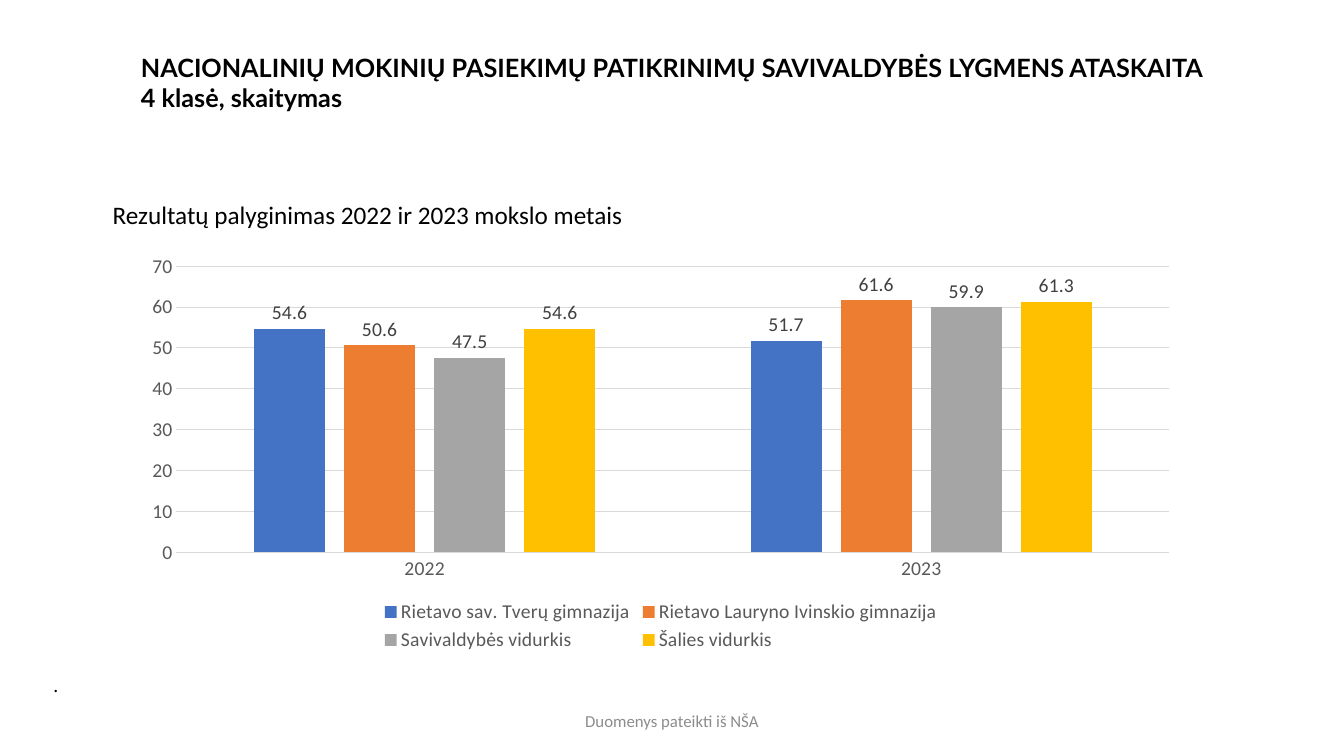
from dataclasses import dataclass

from pptx import Presentation
from pptx.chart.data import CategoryChartData
from pptx.dml.color import RGBColor
from pptx.enum.chart import XL_CHART_TYPE, XL_LABEL_POSITION, XL_LEGEND_POSITION, XL_TICK_MARK
from pptx.enum.text import MSO_ANCHOR, PP_ALIGN
from pptx.util import Inches, Pt

CLUSTERED = XL_CHART_TYPE.COLUMN_CLUSTERED
OUTSIDE_END = XL_LABEL_POSITION.OUTSIDE_END
LEGEND_BOTTOM = XL_LEGEND_POSITION.BOTTOM
NO_TICKS = XL_TICK_MARK.NONE
LEFT, CENTER = PP_ALIGN.LEFT, PP_ALIGN.CENTER
TOP, MIDDLE = MSO_ANCHOR.TOP, MSO_ANCHOR.MIDDLE


@dataclass(frozen=True)
class Theme:
    heading_font: str = "Lato"
    body_font: str = "Calibri"
    heading_size: int = 18
    chart_size: int = 14
    footer_size: int = 12
    text: str = "000000"
    axis_text: str = "595959"
    label_text: str = "404040"
    footer_text: str = "8C8C8C"
    grid: str = "D9D9D9"
    grid_width: float = 0.75


THEME = Theme()
SLIDE_WIDTH, SLIDE_HEIGHT = 13.33, 7.5
CONTENT_LEFT = 1.3

# Text, (left, top, width, height) in inches, font format, paragraph alignment, anchor, wrap
TEXTS = [
    ("NACIONALINIŲ MOKINIŲ PASIEKIMŲ PATIKRINIMŲ SAVIVALDYBĖS LYGMENS ATASKAITA\n"
     "4 klasė, skaitymas",
     (CONTENT_LEFT, 0.47, 10.95, 0.71),
     {"name": THEME.heading_font, "size": THEME.heading_size, "color": THEME.text, "bold": True},
     LEFT, TOP, True),
    ("Rezultatų palyginimas 2022 ir 2023 mokslo metais",
     (1.02, 1.93, 6.63, 0.4),
     {"name": THEME.body_font, "size": THEME.heading_size, "color": THEME.text},
     LEFT, TOP, True),
    (".",
     (0.43, 6.63, 0.25, 0.34),
     {"name": THEME.body_font, "size": THEME.chart_size, "color": THEME.text},
     LEFT, TOP, False),
    ("Duomenys pateikti iš NŠA",
     ((SLIDE_WIDTH - 4.5) / 2, 6.95, 4.5, 0.4),
     {"name": THEME.body_font, "size": THEME.footer_size, "color": THEME.footer_text},
     CENTER, MIDDLE, True),
]

CHART_BOX = (CONTENT_LEFT, 2.44, 10.51, 4.07)
YEARS = ["2022", "2023"]
SERIES = [
    ("Rietavo sav. Tverų gimnazija", (54.6, 51.7), "4472C4"),
    ("Rietavo Lauryno Ivinskio gimnazija", (50.6, 61.6), "ED7D31"),
    ("Savivaldybės vidurkis", (47.5, 59.9), "A5A5A5"),
    ("Šalies vidurkis", (54.6, 61.3), "FFC000"),
]


def format_font(font, values):
    converters = {"size": Pt, "color": RGBColor.from_string}
    for name, value in values.items():
        value = converters.get(name, lambda same: same)(value)
        if name == "color":
            font.color.rgb = value
        else:
            setattr(font, name, value)


def chart_font(color):
    return {"name": THEME.body_font, "size": THEME.chart_size, "color": color}


def format_line(line):
    line.color.rgb = RGBColor.from_string(THEME.grid)
    line.width = Pt(THEME.grid_width)


def add_text(slide, text, box, font, alignment, anchor, wrap):
    frame = slide.shapes.add_textbox(*map(Inches, box)).text_frame
    frame.word_wrap = wrap
    frame.vertical_anchor = anchor
    paragraph = frame.paragraphs[0]
    paragraph.text = text
    paragraph.alignment = alignment
    for run in paragraph.runs:
        format_font(run.font, font)


def format_axes(chart):
    category_axis, value_axis = chart.category_axis, chart.value_axis
    for axis in (category_axis, value_axis):
        axis.major_tick_mark = axis.minor_tick_mark = NO_TICKS
        format_font(axis.tick_labels.font, chart_font(THEME.axis_text))
    format_line(category_axis.format.line)
    value_axis.format.line.fill.background()
    format_line(value_axis.major_gridlines.format.line)
    for name, value in {"minimum_scale": 0, "maximum_scale": 70, "major_unit": 10}.items():
        setattr(value_axis, name, value)


def format_series(series, color):
    series.format.fill.solid()
    series.format.fill.fore_color.rgb = RGBColor.from_string(color)
    series.invert_if_negative = False
    labels = series.data_labels
    labels.show_value = True
    labels.position = OUTSIDE_END
    format_font(labels.font, chart_font(THEME.label_text))


def add_results_chart(slide):
    data = CategoryChartData()
    data.categories = YEARS
    for name, values, _ in SERIES:
        data.add_series(name, values)
    chart = slide.shapes.add_chart(CLUSTERED, *map(Inches, CHART_BOX), data).chart
    chart.has_title = False
    format_font(chart.font, chart_font(THEME.text))
    format_axes(chart)

    plot = chart.plots[0]
    for name, value in {"gap_width": 219, "overlap": -27, "vary_by_categories": False}.items():
        setattr(plot, name, value)
    for series, (_, _, color) in zip(plot.series, SERIES):
        format_series(series, color)

    chart.has_legend = True
    chart.legend.position = LEGEND_BOTTOM
    chart.legend.include_in_layout = False
    format_font(chart.legend.font, chart_font(THEME.axis_text))


def main():
    presentation = Presentation()
    presentation.slide_width = Inches(SLIDE_WIDTH)
    presentation.slide_height = Inches(SLIDE_HEIGHT)
    slide = presentation.slides.add_slide(presentation.slide_layouts[6])
    for text in TEXTS:
        add_text(slide, *text)
    add_results_chart(slide)
    presentation.save("out.pptx")


if __name__ == "__main__":
    main()
